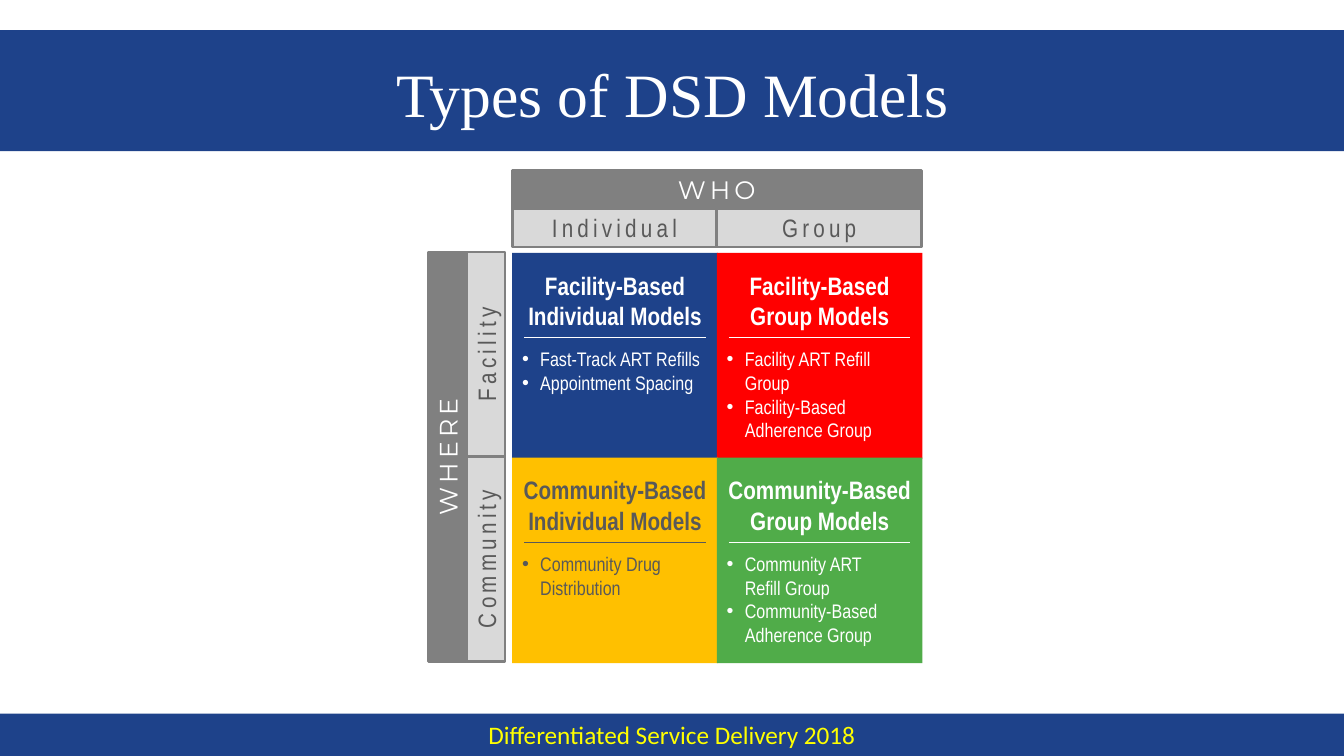
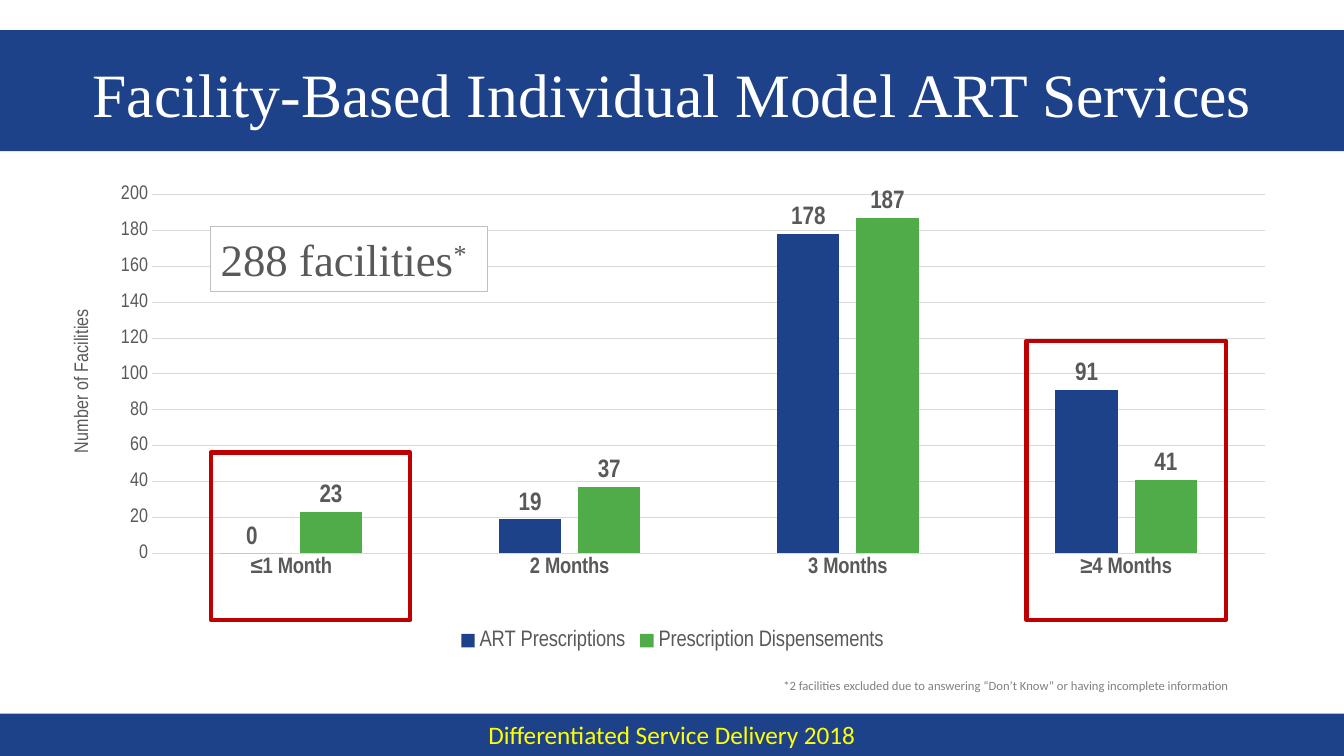
import pptx
import pptx.chart.data
import pptx.dml.color
import pptx.enum.chart
import pptx.enum.shapes
import pptx.enum.text
import pptx.oxml
import pptx.oxml.ns
import pptx.util

Inches = pptx.util.Inches
Pt = pptx.util.Pt
RGBColor = pptx.dml.color.RGBColor
ALIGN = pptx.enum.text.PP_ALIGN
ANCHOR = pptx.enum.text.MSO_ANCHOR

# Shared colours and fonts
BLUE = RGBColor(0x1E, 0x42, 0x8A)
GREEN = RGBColor(0x50, 0xAC, 0x49)
RED = RGBColor(0xFF, 0x00, 0x00)
AMBER = RGBColor(0xFF, 0xC0, 0x00)
YELLOW = RGBColor(0xFF, 0xFF, 0x00)
WHITE = RGBColor(0xFF, 0xFF, 0xFF)
DARK_RED = RGBColor(0xC0, 0x00, 0x00)
TEXT_GREY = RGBColor(0x59, 0x59, 0x59)
MID_GREY = RGBColor(0x80, 0x80, 0x80)
BORDER_GREY = RGBColor(0xBF, 0xBF, 0xBF)
LIGHT_GREY = RGBColor(0xD9, 0xD9, 0xD9)

SERIF = "Times New Roman"
SANS = "Calibri"
NARROW = "Arial Narrow"
DISPLAY = "Montserrat"

# Matrix geometry, in inches
CELL_LEFT, CELL_TOP = 5.08, 2.51
CELL_SIZE, PITCH = 2.04, 2.03
HEADER = 0.38
COLUMN_LABELS = ["Individual", "Group"]
ROW_LABELS = ["Facility", "Community"]

# Row, column, fill, text colour, heading, bullets
MODELS = [
    (0, 0, BLUE, WHITE, "Facility-Based Individual Models",
     ["Fast-Track ART Refills", "Appointment Spacing"]),
    (0, 1, RED, WHITE, "Facility-Based Group Models",
     ["Facility ART Refill Group", "Facility-Based\nAdherence Group"]),
    (1, 0, AMBER, TEXT_GREY, "Community-Based Individual Models",
     ["Community Drug Distribution"]),
    (1, 1, GREEN, WHITE, "Community-Based Group Models",
     ["Community ART\nRefill Group", "Community-Based Adherence Group"]),
]

CATEGORIES = ["≤1 Month", "2 Months", "3 Months", "≥4 Months"]
SERIES = [
    ("ART Prescriptions", BLUE, [0, 19, 178, 91]),
    ("Prescription Dispensements", GREEN, [23, 37, 187, 41]),
]


# Basic elements
def style_font(font, size, name, color, bold=False):
    font.size = Pt(size)
    font.name = name
    font.color.rgb = color
    font.bold = bold


def add_run(paragraph, text, size, name, color, bold=False):
    """Add text, turning each newline into a line break; return the last run."""
    for index, line in enumerate(text.split("\n")):
        if index:
            paragraph.add_line_break()
        run = paragraph.add_run()
        run.text = line
        style_font(run.font, size, name, color, bold)
    return run


def add_box(slide, left, top, width, height, fill=None, line=None, line_width=0.75):
    shape = slide.shapes.add_shape(
        pptx.enum.shapes.MSO_SHAPE.RECTANGLE,
        Inches(left), Inches(top), Inches(width), Inches(height))
    shape.shadow.inherit = False
    if fill is None:
        shape.fill.background()
    else:
        shape.fill.solid()
        shape.fill.fore_color.rgb = fill
    if line is None:
        shape.line.fill.background()
    else:
        shape.line.color.rgb = line
        shape.line.width = Pt(line_width)
    return shape


def add_text_box(slide, left, top, width, height):
    box = slide.shapes.add_textbox(
        Inches(left), Inches(top), Inches(width), Inches(height))
    box.text_frame.word_wrap = True
    return box


def first_paragraph(shape, alignment=ALIGN.CENTER, anchor=ANCHOR.MIDDLE):
    shape.text_frame.vertical_anchor = anchor
    paragraph = shape.text_frame.paragraphs[0]
    paragraph.alignment = alignment
    return paragraph


def add_rule(slide, left, top, width, color):
    rule = slide.shapes.add_connector(
        pptx.enum.shapes.MSO_CONNECTOR.STRAIGHT,
        Inches(left), Inches(top), Inches(left + width), Inches(top))
    rule.line.color.rgb = color
    rule.line.width = Pt(0.75)
    pptx.oxml.ns.qn("a:effectLst")
    rule._element.spPr.append(pptx.oxml.parse_xml(
        "<a:effectLst %s/>" % pptx.oxml.ns.nsdecls("a")))


def set_bullet(paragraph):
    properties = paragraph._p.get_or_add_pPr()
    indent = Inches(0.18)
    properties.set("marL", str(indent))
    properties.set("indent", str(-indent))
    for xml in ('<a:buFont %s typeface="Arial"/>', '<a:buChar %s char="•"/>'):
        properties.append(pptx.oxml.parse_xml(xml % pptx.oxml.ns.nsdecls("a")))


# Frame shared by every slide
def add_framed_slide(presentation, title):
    slide = presentation.slides.add_slide(presentation.slide_layouts[6])
    add_box(slide, 0, 0.3, 13.33, 1.2, BLUE)
    footer = add_box(slide, 0, 7.08, 13.33, 0.42, BLUE)
    add_run(first_paragraph(footer), "Differentiated Service Delivery 2018",
            18, SANS, YELLOW)
    title_box = add_text_box(slide, 0.67, 0.3, 12, 1.25)
    add_run(first_paragraph(title_box), title, 44, SERIF, WHITE)
    return slide


# Matrix of models
def add_label(slide, text, left, top, width, height, is_main=False, upright=False):
    """Add a spaced label; an upright one fills the same area, turned to read up."""
    if upright:
        left, top = left + (width - height) / 2, top + (height - width) / 2
        width, height = height, width
    fill, color, font = (
        (MID_GREY, WHITE, DISPLAY) if is_main else (LIGHT_GREY, TEXT_GREY, NARROW))
    shape = add_box(slide, left, top, width, height, fill, MID_GREY, 2)
    shape.rotation = 270 if upright else 0
    run = add_run(first_paragraph(shape), text, 18, font, color)
    run._r.get_or_add_rPr().set("spc", "300")


def add_model_cell(slide, row, column, fill, color, heading, bullets):
    left, top = CELL_LEFT + column * PITCH, CELL_TOP + row * PITCH
    cell = add_box(slide, left, top, CELL_SIZE, CELL_SIZE, fill)
    cell.text_frame.margin_top = Inches(0.17)
    paragraph = first_paragraph(cell, anchor=ANCHOR.TOP)
    paragraph.space_after = Pt(12)
    add_run(paragraph, heading, 18, NARROW, color, bold=True)
    for bullet in bullets:
        paragraph = cell.text_frame.add_paragraph()
        paragraph.alignment = ALIGN.LEFT
        set_bullet(paragraph)
        add_run(paragraph, bullet, 14, NARROW, color)
    add_rule(slide, left + 0.12, top + 0.84, 1.8, color)


def build_models_slide(presentation):
    slide = add_framed_slide(presentation, "Types of DSD Models")
    span = 2 * PITCH
    add_label(slide, "WHO", CELL_LEFT, 1.69, span, HEADER, is_main=True)
    add_label(slide, "WHERE", 4.25, 2.5, HEADER, span, is_main=True, upright=True)
    for index, text in enumerate(COLUMN_LABELS):
        add_label(slide, text, CELL_LEFT + index * PITCH, 2.07, PITCH, HEADER)
    for index, text in enumerate(ROW_LABELS):
        add_label(slide, text, 4.63, 2.5 + index * PITCH, HEADER, PITCH, upright=True)
    for model in MODELS:
        add_model_cell(slide, *model)


# Chart of services
def set_plot_area(chart, x, y, width, height):
    """Fix the inner plot area, in fractions of the chart."""
    values = zip("xywh", (x, y, width, height))
    sizes = "".join('<c:%s val="%s"/>' % pair for pair in values)
    layout = pptx.oxml.parse_xml(
        '<c:layout %s><c:manualLayout><c:layoutTarget val="inner"/>'
        '<c:xMode val="edge"/><c:yMode val="edge"/>%s</c:manualLayout></c:layout>'
        % (pptx.oxml.ns.nsdecls("c"), sizes))
    plot_area = chart._chartSpace.chart.plotArea
    for old_layout in plot_area.findall(pptx.oxml.ns.qn("c:layout")):
        plot_area.remove(old_layout)
    plot_area.insert(0, layout)


def style_axes(chart):
    no_tick = pptx.enum.chart.XL_TICK_MARK.NONE
    category_axis, value_axis = chart.category_axis, chart.value_axis
    for axis, size, bold in ((category_axis, 16, True), (value_axis, 14, False)):
        axis.major_tick_mark = axis.minor_tick_mark = no_tick
        style_font(axis.tick_labels.font, size, NARROW, TEXT_GREY, bold)
    value_axis.minimum_scale, value_axis.maximum_scale = 0, 200
    value_axis.major_unit = 20
    value_axis.has_major_gridlines = True
    value_axis.format.line.fill.background()
    for line in (category_axis.format.line, value_axis.major_gridlines.format.line):
        line.color.rgb = LIGHT_GREY
        line.width = Pt(0.75)
    paragraph = value_axis.axis_title.text_frame.paragraphs[0]
    add_run(paragraph, "Number of Facilities", 14, NARROW, TEXT_GREY)


def add_services_chart(slide):
    data = pptx.chart.data.CategoryChartData()
    data.categories = CATEGORIES
    for name, _, values in SERIES:
        data.add_series(name, values)
    chart = slide.shapes.add_chart(
        pptx.enum.chart.XL_CHART_TYPE.COLUMN_CLUSTERED,
        Inches(0.67), Inches(1.69), Inches(12), Inches(4.81), data).chart
    chart.has_title = False
    style_font(chart.font, 10, SANS, TEXT_GREY)
    chart.has_legend = True
    chart.legend.position = pptx.enum.chart.XL_LEGEND_POSITION.BOTTOM
    chart.legend.include_in_layout = False
    style_font(chart.legend.font, 16, NARROW, TEXT_GREY)
    style_axes(chart)
    set_plot_area(chart, 0.07, 0.05, 0.92, 0.74)

    plot = chart.plots[0]
    plot.vary_by_categories = False
    plot.gap_width, plot.overlap = 219, -27
    for series, (_, color, _) in zip(plot.series, SERIES):
        series.format.fill.solid()
        series.format.fill.fore_color.rgb = color
        labels = series.data_labels
        labels.show_value = True
        labels.position = pptx.enum.chart.XL_LABEL_POSITION.OUTSIDE_END
        style_font(labels.font, 18, NARROW, TEXT_GREY, bold=True)


def build_services_slide(presentation):
    slide = add_framed_slide(
        presentation, "Facility-Based Individual Model ART Services")
    add_services_chart(slide)

    # Sample size and its footnote
    sample = add_box(slide, 2.09, 2.25, 2.75, 0.64, WHITE, BORDER_GREY)
    paragraph = first_paragraph(sample, ALIGN.LEFT, ANCHOR.TOP)
    add_run(paragraph, "288 facilities", 32, SERIF, TEXT_GREY)
    star = add_run(paragraph, "*", 32, SERIF, TEXT_GREY)
    star._r.get_or_add_rPr().set("baseline", "30000")
    footnote = add_text_box(slide, 7.67, 6.68, 5.02, 0.25)
    add_run(first_paragraph(footnote, ALIGN.LEFT, ANCHOR.TOP),
            "*2 facilities excluded due to answering “Don’t Know” "
            "or having incomplete information", 9, SANS, MID_GREY)

    # Frames around the first and last categories
    for left, top in ((2.09, 4.49), (10.18, 3.38)):
        add_box(slide, left, top, 1.98, 6.15 - top, line=DARK_RED, line_width=3)


def main():
    presentation = pptx.Presentation()
    presentation.slide_width = Inches(13.33)
    presentation.slide_height = Inches(7.5)
    build_models_slide(presentation)
    build_services_slide(presentation)
    presentation.save("out.pptx")


if __name__ == "__main__":
    main()
